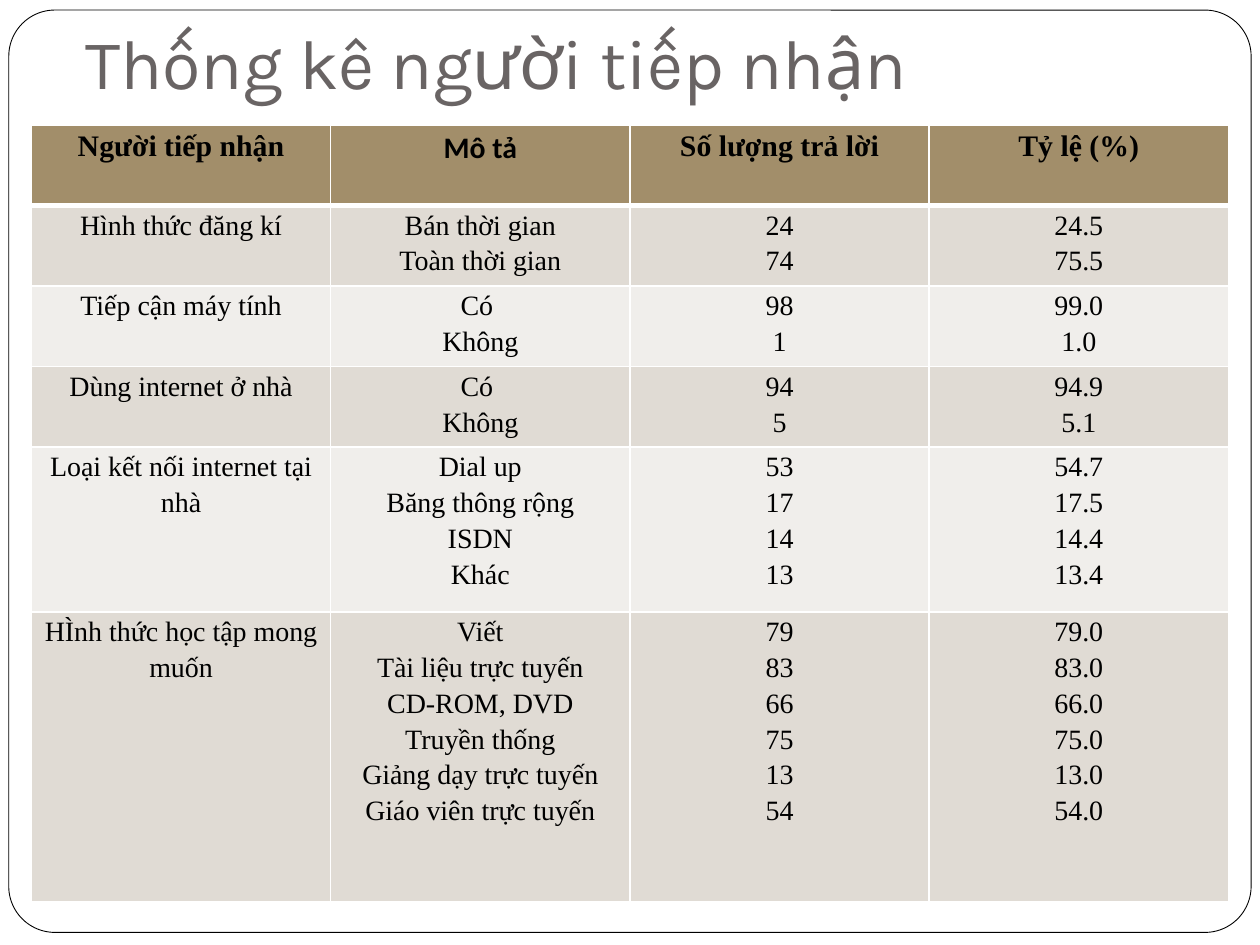
import pptx
import pptx.dml.color
import pptx.enum.shapes
import pptx.enum.text
import pptx.oxml
import pptx.oxml.ns
import pptx.util
from pptx.util import Inches

COLORS = {
    "white": "FFFFFF",
    "black": "000000",
    "title": "696464",
    "header": "A28E6A",
    "odd": "E0DBD4",
    "even": "F0EEEB",
}

HEADINGS = ["Người tiếp nhận", "Mô tả", "Số lượng trả lời", "Tỷ lệ (%)"]
GROUPS = [
    ("Hình thức đăng kí", [("Bán thời gian", "24", "24.5"), ("Toàn thời gian", "74", "75.5")]),
    ("Tiếp cận máy tính", [("Có ", "98", "99.0"), ("Không", "1", "1.0")]),
    ("Dùng internet ở nhà", [("Có ", "94", "94.9"), ("Không", "5", "5.1")]),
    ("Loại kết nối internet tại nhà", [
        ("Dial up", "53", "54.7"),
        ("Băng thông rộng", "17", "17.5"),
        ("ISDN", "14", "14.4"),
        ("Khác", "13", "13.4"),
    ]),
    ("HÌnh thức học tập mong muốn", [
        ("Viết", "79", "79.0"),
        ("Tài liệu trực tuyến", "83", "83.0"),
        ("CD-ROM, DVD", "66", "66.0"),
        ("Truyền thống", "75", "75.0"),
        ("Giảng dạy trực tuyến", "13", "13.0"),
        ("Giáo viên trực tuyến", "54", "54.0"),
    ]),
]
ROW_HEIGHTS = [0.64, 0.64, 0.64, 0.64, 1.31, 2.3]


class SlideBuilder:
    """Holds the style and the current slide, and adds elements to it."""

    title_font = "Karla"
    body_font = "Times New Roman"
    heading_fonts = {"Mô tả": "Calibri"}

    def __init__(self, slide):
        self.slide = slide

    def color(self, name):
        return pptx.dml.color.RGBColor.from_string(COLORS[name])

    def run(self, paragraph, text, font, size, color, bold=False):
        run = paragraph.add_run()
        run.text = text
        run.font.name = font
        run.font.size = pptx.util.Pt(size)
        run.font.bold = bold
        run.font.color.rgb = self.color(color)

    def frame(self, left, top, width, height):
        shape = self.slide.shapes.add_shape(
            pptx.enum.shapes.MSO_SHAPE.ROUNDED_RECTANGLE,
            Inches(left), Inches(top), Inches(width), Inches(height))
        shape.adjustments[0] = 0.05
        shape.shadow.inherit = False
        shape.fill.solid()
        shape.fill.fore_color.rgb = self.color("white")
        shape.line.color.rgb = self.color("black")
        shape.line.width = pptx.util.Pt(0.5)

    def title(self, text, left, top, width, height):
        shape = self.slide.shapes.add_textbox(
            Inches(left), Inches(top), Inches(width), Inches(height))
        text_frame = shape.text_frame
        text_frame.word_wrap = True
        text_frame.vertical_anchor = pptx.enum.text.MSO_ANCHOR.BOTTOM
        text_frame.margin_bottom = Inches(0.1)
        self.run(text_frame.paragraphs[0], text, self.title_font, 40, "title")

    def border(self, cell, side, width):
        line = pptx.oxml.parse_xml(
            f'<a:ln{side} {pptx.oxml.ns.nsdecls("a")} w="{pptx.util.Pt(width)}">'
            f'<a:solidFill><a:srgbClr val="{COLORS["white"]}"/></a:solidFill></a:ln{side}>')
        cell._tc.get_or_add_tcPr().append(line)

    def cell(self, cell, lines, fill, header=False, below_header=False):
        cell.margin_left = cell.margin_right = Inches(0.07)
        cell.margin_top = cell.margin_bottom = 0
        widths = {"L": 1, "R": 1, "T": 3 if below_header else 1, "B": 3 if header else 1}
        for side, width in widths.items():
            self.border(cell, side, width)
        cell.fill.solid()
        cell.fill.fore_color.rgb = self.color(fill)
        for index, text in enumerate(lines):
            text_frame = cell.text_frame
            paragraph = text_frame.add_paragraph() if index else text_frame.paragraphs[0]
            paragraph.alignment = pptx.enum.text.PP_ALIGN.CENTER
            paragraph.line_spacing = 1.15
            font = self.heading_fonts.get(text, self.body_font)
            self.run(paragraph, text, font, 17 if header else 16, "black", header)

    def table(self, headings, groups, row_heights, left, top, width):
        table = self.slide.shapes.add_table(
            len(row_heights), len(headings), Inches(left), Inches(top),
            Inches(width), Inches(sum(row_heights))).table
        for column in table.columns:
            column.width = Inches(width / len(headings))
        for row, height in zip(table.rows, row_heights):
            row.height = Inches(height)
        for column, heading in enumerate(headings):
            self.cell(table.cell(0, column), [heading], "header", header=True)
        for row, (name, answers) in enumerate(groups, start=1):
            fill = "odd" if row % 2 else "even"
            for column, lines in enumerate([[name], *zip(*answers)]):
                self.cell(table.cell(row, column), lines, fill, below_header=row == 1)


def main():
    presentation = pptx.Presentation()
    presentation.slide_width = Inches(10)
    presentation.slide_height = Inches(7.5)
    builder = SlideBuilder(presentation.slides.add_slide(presentation.slide_layouts[6]))
    builder.frame(0.07, 0.08, 9.86, 7.32)
    builder.title("Thống kê người tiếp nhận", 0.58, -0.33, 8.5, 1.25)
    builder.table(HEADINGS, GROUPS, ROW_HEIGHTS, 0.25, 0.99, 9.5)
    presentation.save("out.pptx")


if __name__ == "__main__":
    main()
